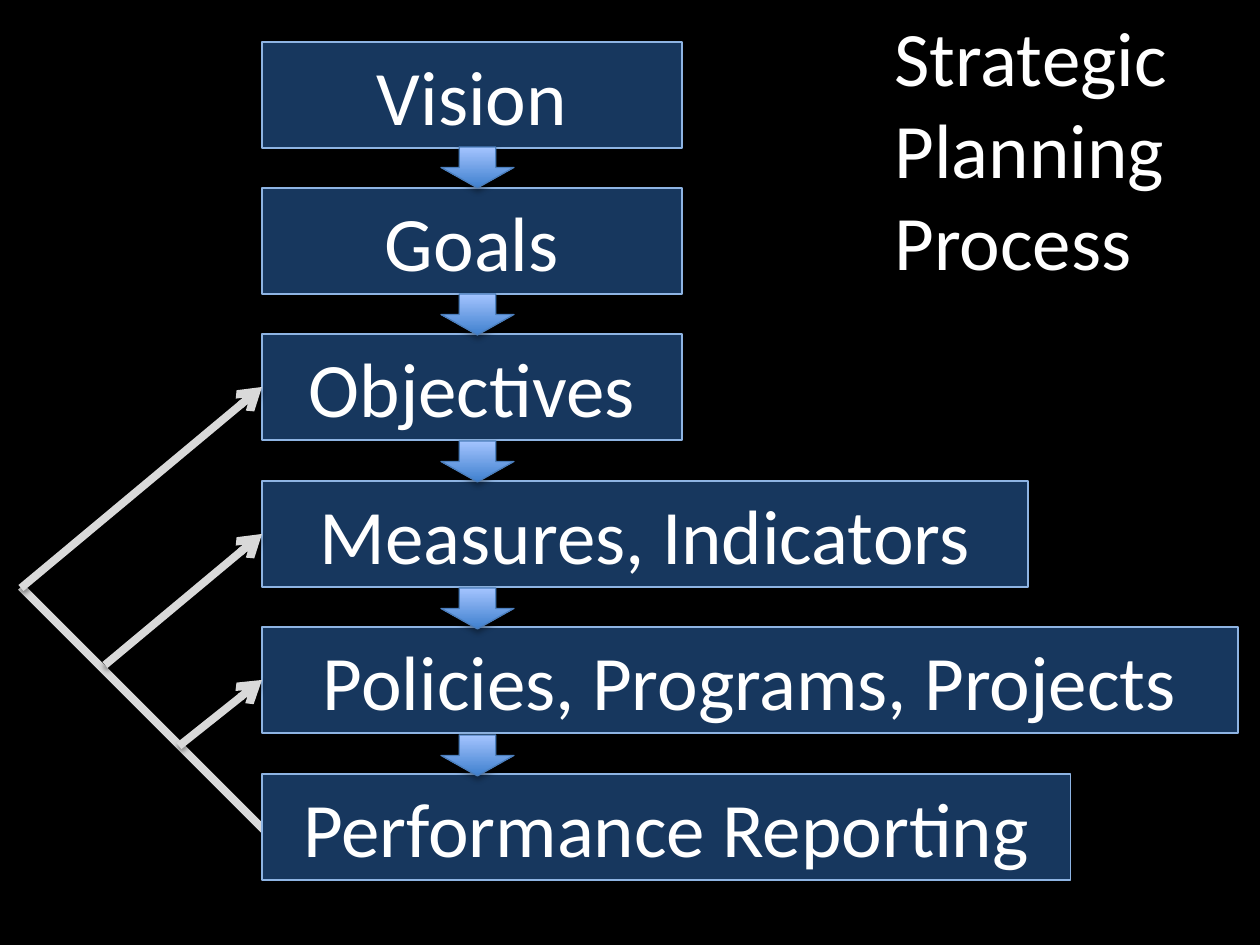
import pptx
import pptx.util
import pptx.dml.color
import pptx.enum.shapes
import pptx.enum.text
import pptx.oxml
import pptx.oxml.ns

PX = 914400 // 126


def px(*lengths):
    return [pptx.util.Emu(length * PX) for length in lengths]


def color(code):
    return pptx.dml.color.RGBColor.from_string(code)


deck = pptx.Presentation()
deck.slide_width = pptx.util.Inches(10)
deck.slide_height = pptx.util.Inches(7.5)
page = deck.slides.add_slide(deck.slide_layouts[6])
page.background.fill.solid()
page.background.fill.fore_color.rgb = color("000000")

straight = pptx.enum.shapes.MSO_CONNECTOR.STRAIGHT
spine = page.shapes.add_connector(straight, *px(294, 860, 21, 587))

steps = [
    ("Vision", 420),
    ("Goals", 420),
    ("Objectives", 420),
    ("Measures, Indicators", 766),
    ("Policies, Programs, Projects", 976),
    ("Performance Reporting", 809),
]
boxes = []
for index, (label, width) in enumerate(steps):
    top = 42 + index * 732 // 5
    box = page.shapes.add_shape(
        pptx.enum.shapes.MSO_SHAPE.RECTANGLE, *px(262, top, width, 106))
    box.shadow.inherit = False
    box.fill.solid()
    box.fill.fore_color.rgb = color("17375E")
    box.line.color.rgb = color("8EB4E3")
    box.line.width = pptx.util.Pt(0.75)
    box.text_frame.text = label
    box.text_frame.paragraphs[0].alignment = pptx.enum.text.PP_ALIGN.CENTER
    boxes.append(box)

title = page.shapes.add_textbox(*px(882, 3, 378, 292))
title.text_frame.text = "Strategic Planning Process"

for box in boxes + [title]:
    box.text_frame.word_wrap = True
    box.text_frame.auto_size = pptx.enum.text.MSO_AUTO_SIZE.SHAPE_TO_FIT_TEXT
    font = box.text_frame.paragraphs[0].font
    font.name = "Calibri"
    font.size = pptx.util.Pt(44)
    font.color.rgb = color("FFFFFF")

arrows = []
for index in range(len(steps) - 1):
    arrow = page.shapes.add_shape(
        pptx.enum.shapes.MSO_SHAPE.DOWN_ARROW, *px(441, 147 + 147 * index, 73, 41))
    arrow.fill.gradient()
    arrow.fill.gradient_angle = 90
    for stop, position, code in zip(arrow.fill.gradient_stops, (0, 1), ("3F80CE", "A4C4FF")):
        stop.position = position
        stop.color.rgb = color(code)
    arrow.line.color.rgb = color("4B7EBC")
    arrow.line.width = pptx.util.Pt(0.75)
    arrows.append(arrow)

branches = []
for left, top, box in [(21, 588, boxes[2]), (105, 665, boxes[3]), (179, 746, boxes[4])]:
    branch = page.shapes.add_connector(straight, *px(left, top, 262, top))
    branch.end_connect(box, 1)
    branches.append(branch)

for line in [spine] + branches:
    line.line.color.rgb = color("D9D9D9")
    line.line.width = pptx.util.Pt(4.5)

for branch in branches:
    branch.line._get_or_add_ln().append(pptx.oxml.parse_xml(
        f'<a:tailEnd {pptx.oxml.ns.nsdecls("a")} type="arrow"/>'))

for shape in [spine] + arrows + branches:
    distance, opacity = (23000, 35000) if shape in arrows else (20000, 38000)
    shape._element.spPr.append(pptx.oxml.parse_xml(
        f'<a:effectLst {pptx.oxml.ns.nsdecls("a")}>'
        f'<a:outerShdw blurRad="40000" dist="{distance}" dir="5400000" rotWithShape="0">'
        f'<a:srgbClr val="000000"><a:alpha val="{opacity}"/></a:srgbClr>'
        '</a:outerShdw></a:effectLst>'))

deck.save("out.pptx")
